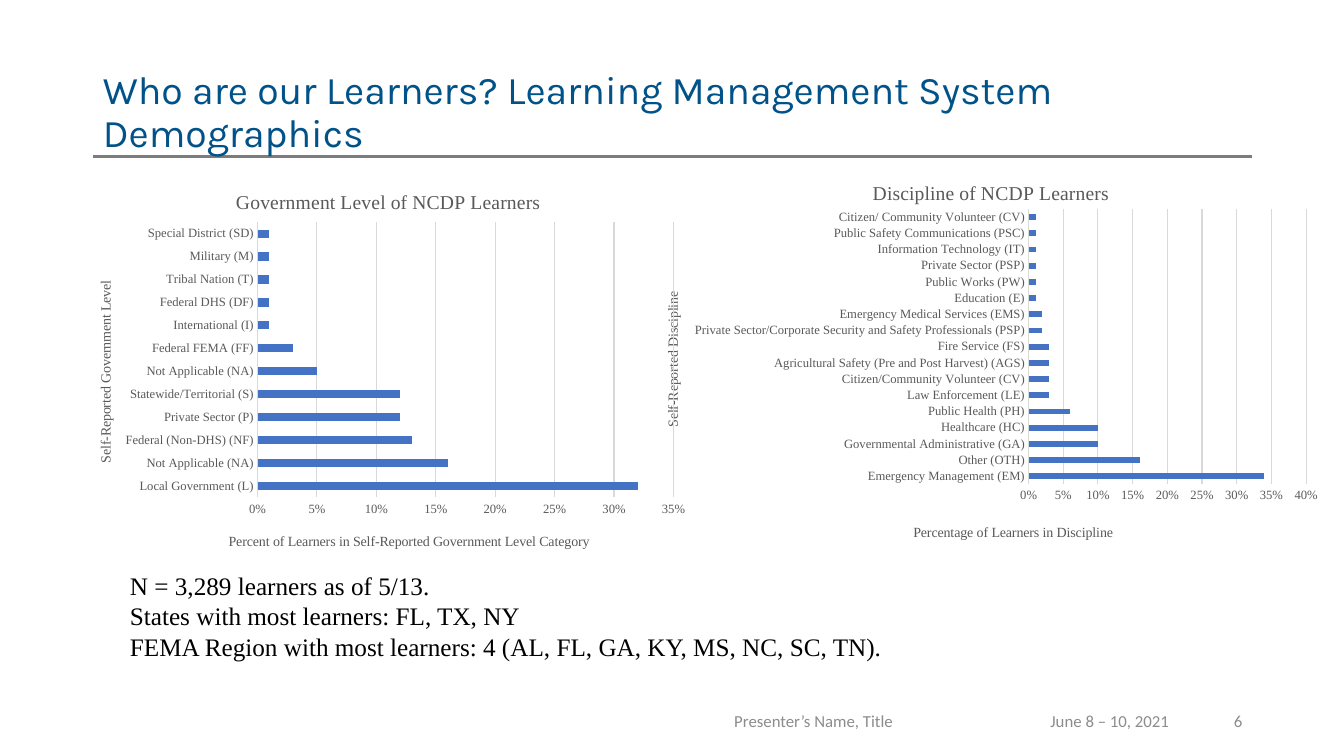
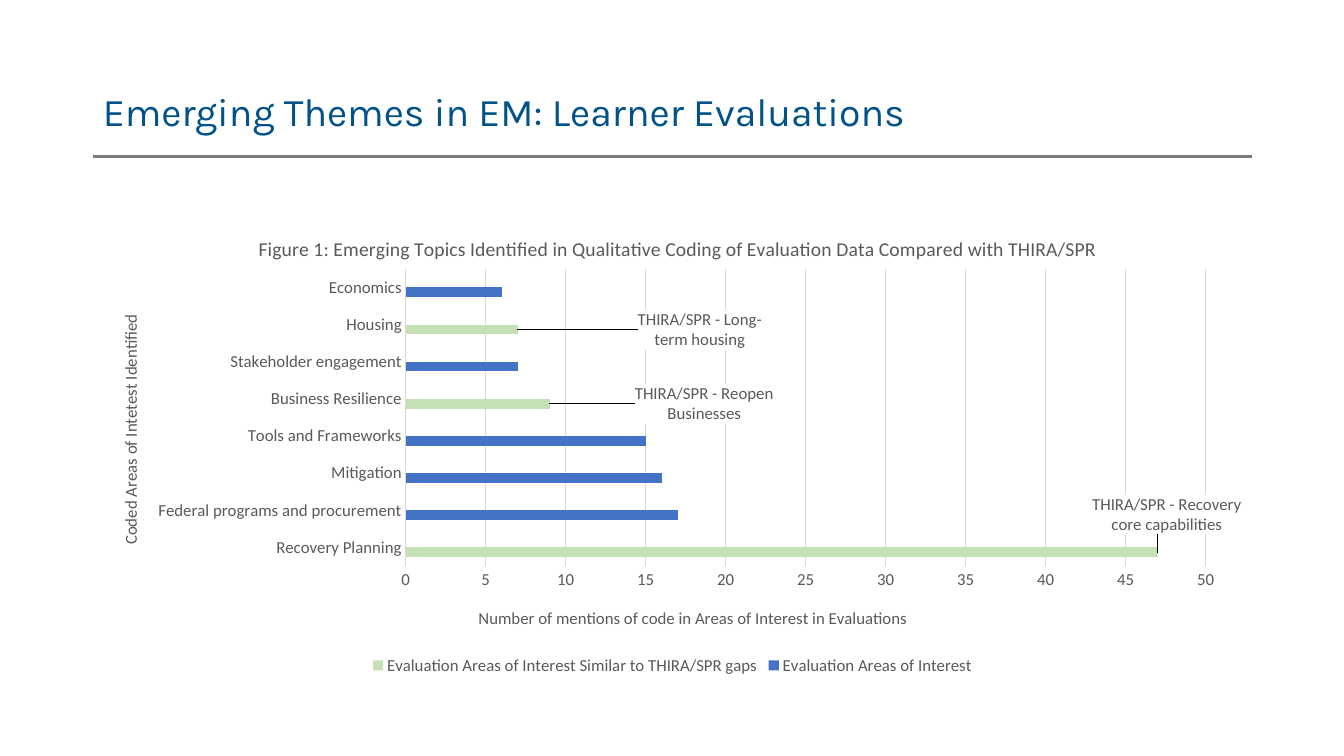
import pptx
import pptx.chart.data
import pptx.dml.color
import pptx.enum.chart
import pptx.enum.shapes
import pptx.enum.text
import pptx.oxml
import pptx.oxml.ns
import pptx.util

IN, PT = pptx.util.Inches, pptx.util.Pt
KIND = pptx.enum.chart
ALIGN = pptx.enum.text.PP_ALIGN
BLUE, GREEN, GREY, PALE = "4472C4", "C5E0B4", "595959", "D9D9D9"
TIMES, PLAIN = "Times New Roman", "Calibri"
C15 = "http://schemas.microsoft.com/office/drawing/2012/chart"
URI = "{CE6537A1-D6FC-4f65-9D91-7224C49458BB}"

# Content: pos values are shares of the chart's size
FIELDS = dict(
    box=(6.35, 1.56, 6.88, 3.96), font=TIMES, sizes=(14, 10, 9),
    title="Discipline of NCDP Learners",
    cat="Self-Reported Discipline", val="Percentage of Learners in Discipline",
    pos=dict(plot=(.56, .13, .4, .69), title=(.33, .05), cat=(.03, .33), val=(.39, .91)),
    top=.4, step=.05, form="0%",
    rows=[
        ("Emergency Management (EM)", .34), ("Other (OTH)", .16),
        ("Governmental Administrative (GA)", .1), ("Healthcare (HC)", .1),
        ("Public Health (PH)", .06), ("Law Enforcement (LE)", .03),
        ("Citizen/Community Volunteer (CV)", .03),
        ("Agricultural Safety (Pre and Post Harvest) (AGS)", .03),
        ("Fire Service (FS)", .03),
        ("Private Sector/Corporate Security and Safety Professionals (PSP)", .02),
        ("Emergency Medical Services (EMS)", .02), ("Education (E)", .01),
        ("Public Works (PW)", .01), ("Private Sector (PSP)", .01),
        ("Information Technology (IT)", .01),
        ("Public Safety Communications (PSC)", .01),
        ("Citizen/ Community Volunteer (CV)", .01)],
    series=[("Series 1", BLUE)])

LEVELS = dict(
    box=(.68, 1.65, 6.25, 3.96), font=TIMES, sizes=(14, 10, 9),
    title="Government Level of NCDP Learners",
    cat="Self-Reported Government Level",
    val="Percent of Learners in Self-Reported Government Level Category",
    pos=dict(plot=(.3, .14, .66, .69), title=(.26, .05), cat=(.04, .28), val=(.25, .91)),
    top=.35, step=.05, form="0%",
    rows=[
        ("Local Government (L)", .32), ("Not Applicable (NA)", .16),
        ("Federal (Non-DHS) (NF)", .13), ("Private Sector (P)", .12),
        ("Statewide/Territorial (S)", .12), ("Not Applicable (NA)", .05),
        ("Federal FEMA (FF)", .03), ("International (I)", .01),
        ("Federal DHS (DF)", .01), ("Tribal Nation (T)", .01),
        ("Military (M)", .01), ("Special District (SD)", .01)],
    series=[("Series 1", BLUE)])

THEMES = dict(
    box=(.92, 2.06, 11.5, 4.68), font=PLAIN, sizes=(14, 12, 12),
    title="Figure 1: Emerging Topics Identified in Qualitative Coding of "
          "Evaluation Data Compared with THIRA/SPR",
    cat="Coded Areas of Intetest Identified",
    val="Number of mentions of code in Areas of Interest in Evaluations",
    pos=dict(plot=(.27, .13, .69, .63), title=(.14, .05), cat=(.02, .22), val=(.33, .84)),
    top=50, step=5, form="General",
    rows=[
        ("Recovery Planning", 47, 0), ("Federal programs and procurement", 17, 0),
        ("Mitigation", 16, 0), ("Tools and Frameworks", 15),
        ("Business Resilience", 9), ("Stakeholder engagement", 7),
        ("Housing", 7), ("Economics", 6)],
    series=[("Evaluation Areas of Interest", BLUE),
            ("Evaluation Areas of Interest Similar to THIRA/SPR gaps", GREEN)],
    # point: text, shift from the bar's end, label size
    marks={0: ("THIRA/SPR - Recovery core capabilities", (-.06, -.08), (.14, .09)),
           4: ("THIRA/SPR - Reopen Businesses", (.07, 0), (.13, .09)),
           6: ("THIRA/SPR - Long-term housing", (.1, 0), (.13, .09))})

FACTS = ["N = 3,289 learners as of 5/13.",
         "States with most learners: FL, TX, NY",
         "FEMA Region with most learners: 4 (AL, FL, GA, KY, MS, NC, SC, TN)."]

FOOTS = [("June 8 – 10, 2021", 10.32, 1.4, ALIGN.LEFT),
         ("Presenter’s Name, Title", 5.82, 4.5, ALIGN.CENTER),
         ("6", 11.72, .7, ALIGN.RIGHT)]


# Helpers
def rgb(code):
    return pptx.dml.color.RGBColor.from_string(code)


def style(font, name, size, code):
    font.name, font.size, font.bold = name, PT(size), False
    font.color.rgb = rgb(code)


def node(xml):
    space = pptx.oxml.ns.nsdecls("c", "a")
    return pptx.oxml.parse_xml(xml.replace(">", f' {space} xmlns:c15="{C15}">', 1))


def lay(owner, spot, pos, inner=False):
    """Set a manual layout on a chart part."""
    for old in owner.xpath("./c:layout"):
        owner.remove(old)
    tags = '<c:layoutTarget val="inner"/>' if inner else ""
    if inner or owner.tag.endswith("title"):
        tags += '<c:xMode val="edge"/><c:yMode val="edge"/>'
    tags += "".join(f'<c:{k} val="{v}"/>' for k, v in zip("xywh", pos))
    owner.insert(spot, node(f"<c:layout><c:manualLayout>{tags}</c:manualLayout></c:layout>"))


def head(title, text, name, size, pos, turn=0):
    title.text_frame.text = text
    style(title.text_frame.paragraphs[0].font, name, size, GREY)
    title.element.xpath(".//a:bodyPr")[0].set("rot", str(turn * 60000))
    lay(title.element, 1, pos)


def write(slide, lines, box, name, size, code, side=ALIGN.LEFT, middle=False):
    frame = slide.shapes.add_textbox(*map(IN, box)).text_frame
    frame.word_wrap = True
    if middle:
        frame.vertical_anchor = pptx.enum.text.MSO_ANCHOR.MIDDLE
    frame.text = "\n".join(lines)
    for para in frame.paragraphs:
        para.alignment = side
        style(para.font, name, size, code)


def label(chart, marks, name, size):
    """Add shifted labels with leader lines to chosen points."""
    series = chart.plots[0].series[0]
    series.data_labels.show_value = False
    for i, (text, shift, area) in marks.items():
        point = series.points[i]
        point.format.fill.solid()
        point.format.fill.fore_color.rgb = rgb(GREEN)
        tag = point.data_label
        tag.text_frame.text = text
        style(tag.text_frame.paragraphs[0].font, name, size, GREY)
        tag.position = KIND.XL_LABEL_POSITION.OUTSIDE_END
    group = chart.element.xpath(".//c:ser/c:dLbls")[0]
    for item, (text, shift, area) in zip(group.xpath("./c:dLbl"), marks.values()):
        lay(item, 1, shift)
        item.xpath("./c:tx")[0].addnext(node(
            '<c:spPr><a:solidFill><a:srgbClr val="FFFFFF"/></a:solidFill></c:spPr>'))
        tags = "".join(f'<c:{k} val="{v}"/>' for k, v in zip("wh", area))
        item.append(node(f'<c:extLst><c:ext uri="{URI}"><c15:layout><c:manualLayout>{tags}'
                         "</c:manualLayout></c15:layout></c:ext></c:extLst>"))
    group.append(node(f'<c:extLst><c:ext uri="{URI}"><c15:showLeaderLines val="1"/>'
                      "</c:ext></c:extLst>"))


def draw(slide, info):
    """Add one bar chart."""
    rows, name, pos = info["rows"], info["font"], info["pos"]
    big, mid, small = info["sizes"]
    data = pptx.chart.data.CategoryChartData()
    data.categories = [row[0] for row in rows]
    for i, (text, code) in enumerate(info["series"], 1):
        data.add_series(text, [row[i] if i < len(row) else None for row in rows])
    chart = slide.shapes.add_chart(KIND.XL_CHART_TYPE.BAR_CLUSTERED,
                                   *map(IN, info["box"]), data).chart
    style(chart.font, name, small, GREY)
    plot = chart.plots[0]
    plot.gap_width, plot.vary_by_categories = 182, False
    for series, (text, code) in zip(plot.series, info["series"]):
        series.format.fill.solid()
        series.format.fill.fore_color.rgb = rgb(code)
    cat, val = chart.category_axis, chart.value_axis
    for axis in (cat, val):
        axis.major_tick_mark = axis.minor_tick_mark = KIND.XL_TICK_MARK.NONE
        style(axis.tick_labels.font, name, small, GREY)
    val.minimum_scale, val.maximum_scale, val.major_unit = 0, info["top"], info["step"]
    val.tick_labels.number_format = info["form"]
    val.tick_labels.number_format_is_linked = False
    val.format.line.fill.background()
    for line in (cat.format.line, val.major_gridlines.format.line):
        line.color.rgb, line.width = rgb(PALE), PT(.75)
    head(chart.chart_title, info["title"], name, big, pos["title"])
    head(cat.axis_title, info["cat"], name, mid, pos["cat"], -90)
    head(val.axis_title, info["val"], name, mid, pos["val"])
    lay(chart.element.xpath(".//c:plotArea")[0], 0, pos["plot"], True)
    chart.has_legend = len(info["series"]) > 1
    if chart.has_legend:
        chart.legend.position = KIND.XL_LEGEND_POSITION.BOTTOM
        chart.legend.include_in_layout = False
        style(chart.legend.font, name, small, GREY)
    if "marks" in info:
        label(chart, info["marks"], name, small)


def start(deck, text, wide):
    """Add a slide with its title."""
    slide = deck.slides.add_slide(deck.slide_layouts[5])
    title = slide.shapes.title
    title.left, title.top, title.width, title.height = map(IN, (.92, .4, wide, 1.45))
    frame = title.text_frame
    frame.text, frame.word_wrap = text, True
    frame.vertical_anchor = pptx.enum.text.MSO_ANCHOR.MIDDLE
    para = frame.paragraphs[0]
    para.alignment, para.line_spacing = ALIGN.LEFT, .9
    style(para.font, "Karla", 28, "005288")
    return slide


def rule(slide):
    """Put the line under the title on the shared layout."""
    line = slide.shapes.add_connector(pptx.enum.shapes.MSO_CONNECTOR.STRAIGHT,
                                      IN(.92), IN(1.55), IN(12.42), IN(1.55))
    line.line.color.rgb, line.line.width = rgb("7C7C7C"), PT(2.25)
    line.element.spPr.append(node("<a:effectLst></a:effectLst>"))
    slide.slide_layout.shapes.element.append(line.element)


def main():
    deck = pptx.Presentation()
    deck.slide_width, deck.slide_height = IN(13.33), IN(7.5)

    # Learners
    slide = start(deck, "Who are our Learners? Learning Management System Demographics", 11.74)
    rule(slide)
    for text, left, wide, side in FOOTS:
        write(slide, [text], (left, 6.95, wide, .4), PLAIN, 12, "8C8C8C", side, True)
    draw(slide, FIELDS)
    draw(slide, LEVELS)
    write(slide, FACTS, (1.19, 5.61, 10.12, 1.01), TIMES, 18, "000000")

    # Themes
    slide = start(deck, "Emerging Themes in EM: Learner Evaluations", 11.5)
    draw(slide, THEMES)
    deck.save("out.pptx")


if __name__ == "__main__":
    main()
